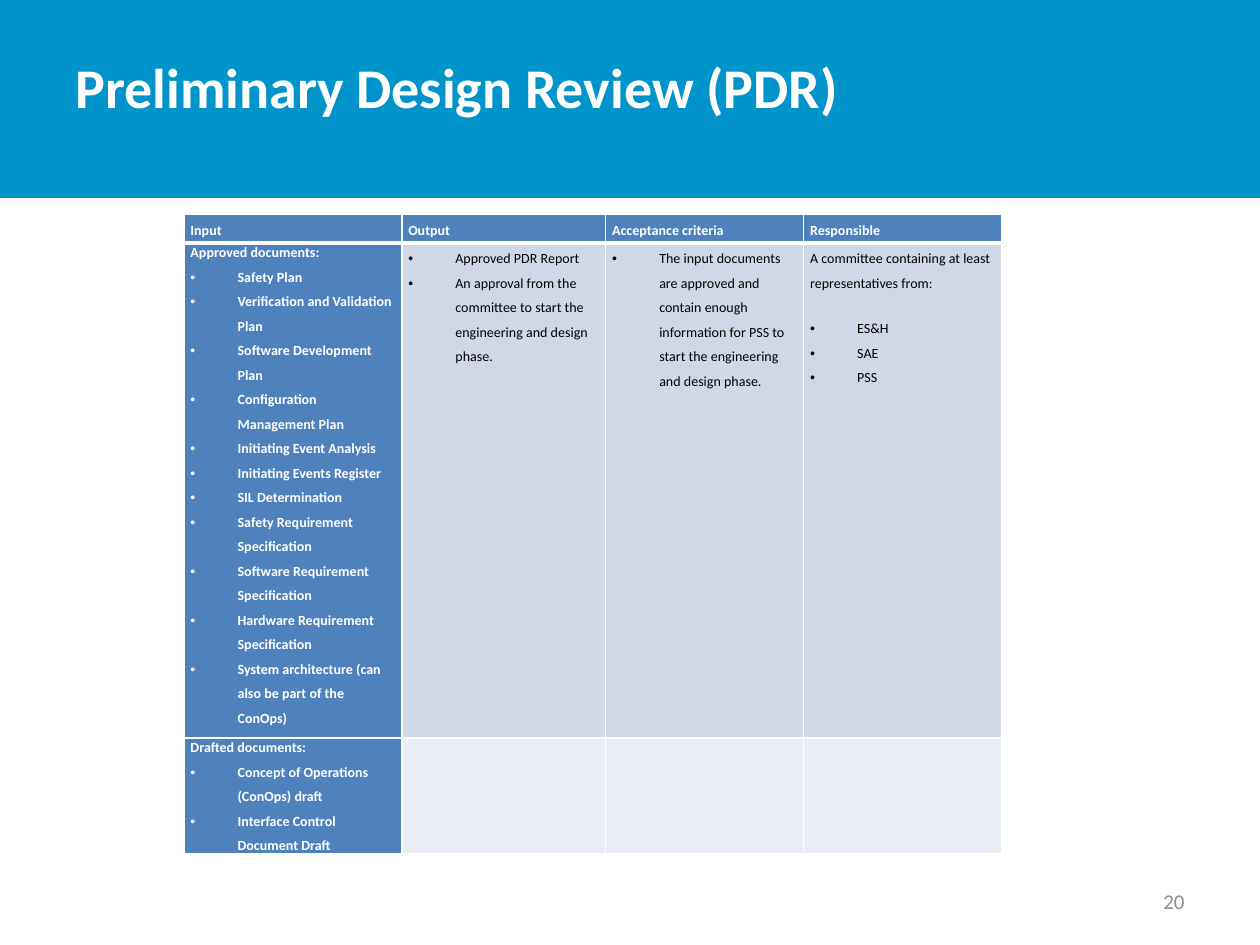
from dataclasses import dataclass

from lxml.etree import SubElement
from pptx import Presentation
from pptx.dml.color import RGBColor
from pptx.enum.shapes import MSO_SHAPE
from pptx.enum.text import MSO_ANCHOR, PP_ALIGN
from pptx.oxml import parse_xml
from pptx.oxml.ns import nsdecls, qn
from pptx.util import Cm, Pt


@dataclass(frozen=True)
class Theme:
    font: str = "Calibri"
    band: str = "0094CA"
    head: str = "4F81BD"
    odd: str = "D0D8E8"
    even: str = "E9EDF4"
    white: str = "FFFFFF"
    black: str = "000000"
    grey: str = "8C8C8C"
    title: int = 32
    body: int = 8
    page: int = 12


THEME = Theme()
INDENT = Cm(0.95)
COLS = (4.39, 4.11, 3.99, 3.99)
ROWS = (0.58, 9.98, 2.34)

# Each cell: an optional lead line, then its bullets
HEADS = ("Input", "Output", "Acceptance criteria", "Responsible")
APPROVED = ("Approved documents:", (
    "Safety Plan",
    "Verification and Validation Plan",
    "Software Development Plan",
    "Configuration Management Plan",
    "Initiating Event Analysis",
    "Initiating Events Register",
    "SIL Determination",
    "Safety Requirement Specification",
    "Software Requirement Specification",
    "Hardware Requirement Specification",
    "System architecture (can also be part of the ConOps)",
))
OUTPUT = ("", (
    "Approved PDR Report",
    "An approval from the committee to start the engineering and design phase.",
))
CRITERIA = ("", (
    "The input documents are approved and contain enough information "
    "for PSS to start the engineering and design phase.",
))
PEOPLE = ("A committee containing at least representatives from:",
          ("ES&H", "SAE", "PSS"))
DRAFTED = ("Drafted documents:", (
    "Concept of Operations (ConOps) draft",
    "Interface Control Document Draft",
))
NONE = ("", ())
BODY = (
    (APPROVED, OUTPUT, CRITERIA, PEOPLE),
    (DRAFTED, NONE, NONE, NONE),
)


def style(para, size, color, bold=False):
    font = para.font
    font.name = THEME.font
    font.size = Pt(size)
    font.bold = bold
    font.color.rgb = RGBColor.from_string(color)


def add_band(slide, width):
    band = slide.shapes.add_shape(MSO_SHAPE.RECTANGLE, 0, 0, width, Cm(3.99))
    band.shadow.inherit = False
    band.fill.solid()
    band.fill.fore_color.rgb = RGBColor.from_string(THEME.band)
    band.line.fill.background()


def add_label(slide, box, text, size, color, anchor, align, bold=False):
    frame = slide.shapes.add_textbox(*map(Cm, box)).text_frame
    frame.word_wrap = True
    frame.vertical_anchor = anchor
    para = frame.paragraphs[0]
    para.text = text
    para.alignment = align
    style(para, size, color, bold)
    return frame


def add_edges(cell, row):
    """Draw white cell borders, thicker below the header row."""
    wide = {"T": 3 if row == 1 else 1, "B": 3 if row == 0 else 1}
    props = cell._tc.get_or_add_tcPr()
    for pos, side in enumerate("LRTB"):
        props.insert(pos, parse_xml(
            f'<a:ln{side} {nsdecls("a")} w="{Pt(wide.get(side, 1))}">'
            f'<a:solidFill><a:srgbClr val="{THEME.white}"/></a:solidFill>'
            f'</a:ln{side}>'))


def set_cell(cell, row, fill):
    cell.margin_left = cell.margin_right = Cm(0.13)
    cell.margin_top = cell.margin_bottom = 0
    cell.fill.solid()
    cell.fill.fore_color.rgb = RGBColor.from_string(fill)
    add_edges(cell, row)


def add_bullet(para):
    props = para._p.get_or_add_pPr()
    props.set("marL", str(INDENT))
    props.set("indent", str(-INDENT))
    SubElement(props, qn("a:buFont")).set("typeface", "Arial")
    SubElement(props, qn("a:buChar")).set("char", "•")


def fill_list(cell, lead, items, first):
    color = THEME.white if first else THEME.black
    lines = ([(lead, False)] if lead else []) + [(item, True) for item in items]
    frame = cell.text_frame
    for pos, (text, dot) in enumerate(lines):
        para = frame.add_paragraph() if pos else frame.paragraphs[0]
        para.text = text
        if dot:
            add_bullet(para)
        para.line_spacing = 1.07 if first and not dot else Pt(14)
        if not first and not dot:
            para.space_after = Pt(12)
        style(para, THEME.body, color, first)


def add_grid(slide):
    grid = slide.shapes.add_table(
        len(ROWS), len(COLS), Cm(3.71), Cm(4.32),
        Cm(sum(COLS)), Cm(sum(ROWS))).table
    grid.horz_banding = False
    for col, width in zip(grid.columns, COLS):
        col.width = Cm(width)
    for row, height in zip(grid.rows, ROWS):
        row.height = Cm(height)

    # Header row
    for col, text in enumerate(HEADS):
        cell = grid.cell(0, col)
        set_cell(cell, 0, THEME.head)
        para = cell.text_frame.paragraphs[0]
        para.text = text
        para.alignment = PP_ALIGN.JUSTIFY
        para.line_spacing = Pt(14)
        para.space_after = Pt(12)
        style(para, THEME.body, THEME.white, True)

    # Body rows, with a dark first column
    for row, cells in enumerate(BODY, 1):
        shade = THEME.odd if row % 2 else THEME.even
        for col, (lead, items) in enumerate(cells):
            cell = grid.cell(row, col)
            set_cell(cell, row, shade if col else THEME.head)
            fill_list(cell, lead, items, col == 0)


def main():
    deck = Presentation()
    deck.slide_width, deck.slide_height = Cm(25.4), Cm(19.05)
    slide = deck.slides.add_slide(deck.slide_layouts[6])

    # Title band
    add_band(slide, deck.slide_width)
    title = add_label(slide, (1.27, 0.76, 19.84, 3.18),
                      "Preliminary Design Review (PDR)", THEME.title,
                      THEME.white, MSO_ANCHOR.TOP, PP_ALIGN.LEFT, True)
    title.margin_top = Cm(0.3)

    # Review table
    add_grid(slide)

    # Page number
    add_label(slide, (18.21, 17.65, 5.92, 1.02), "20", THEME.page,
              THEME.grey, MSO_ANCHOR.MIDDLE, PP_ALIGN.RIGHT)
    deck.save("out.pptx")


if __name__ == "__main__":
    main()
